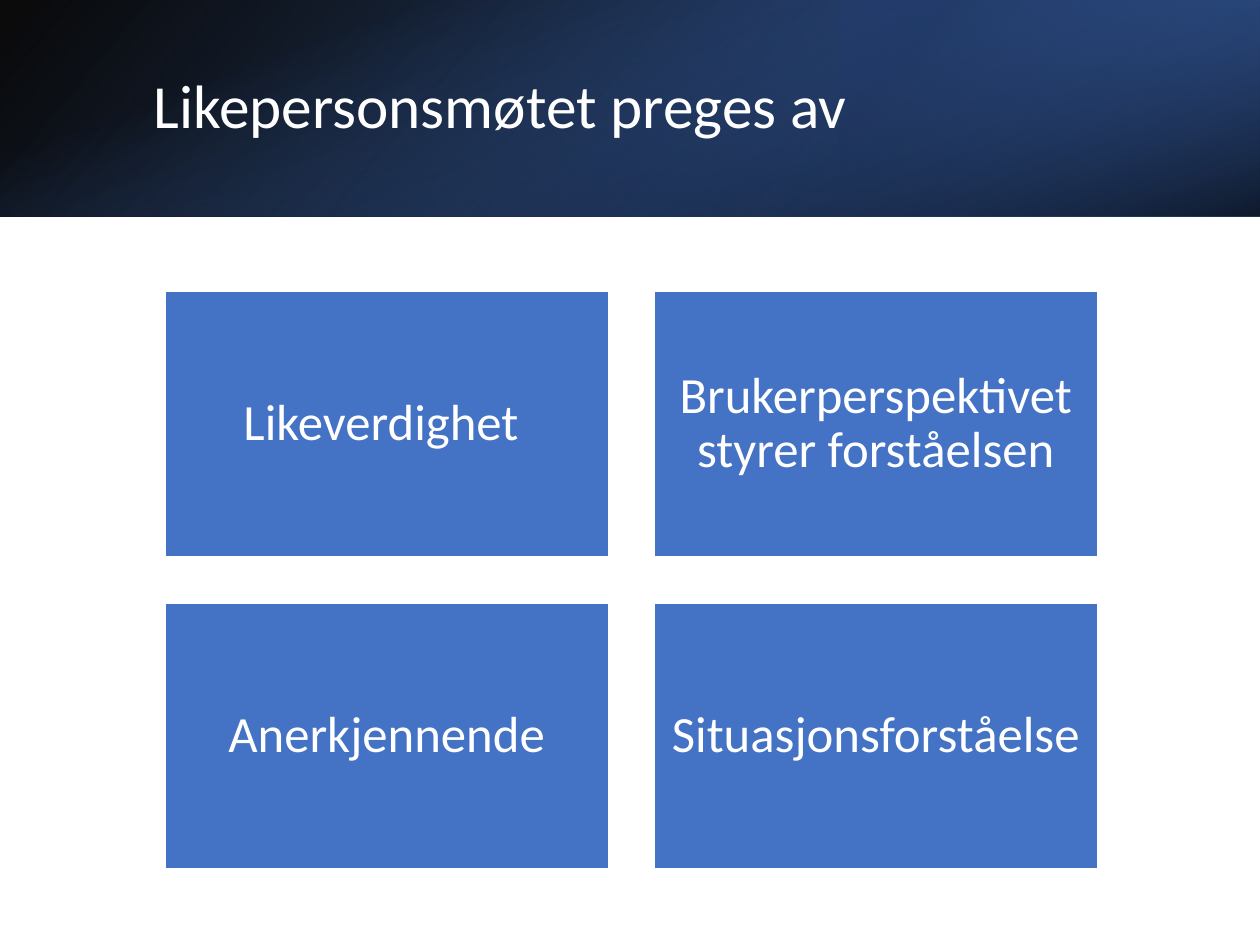
from lxml import etree
from pptx import Presentation
from pptx.dml.color import RGBColor
from pptx.enum.shapes import MSO_SHAPE
from pptx.enum.text import MSO_ANCHOR, PP_ALIGN
from pptx.oxml.ns import qn
from pptx.util import Pt

RECT = MSO_SHAPE.RECTANGLE
MIDDLE = MSO_ANCHOR.MIDDLE
LEFT, CENTER = PP_ALIGN.LEFT, PP_ALIGN.CENTER
WHITE = RGBColor(0xFF, 0xFF, 0xFF)
BLACK = RGBColor(0x00, 0x00, 0x00)
BLUE = RGBColor(0x44, 0x72, 0xC4)
MID_BLUE = RGBColor(0x2F, 0x55, 0x97)
NAVY = RGBColor(0x20, 0x38, 0x64)


def fill_gradient(sp, stops, angle):
    """Linear gradient; stops are (position %, colour, opacity % or None)."""
    sp.fill.gradient()
    grad = sp.fill._fill._gradFill
    for child in list(grad):
        grad.remove(child)
    gs_list = etree.SubElement(grad, qn("a:gsLst"))
    for pos, color, alpha in stops:
        gs = etree.SubElement(gs_list, qn("a:gs"), pos=str(pos * 1000))
        clr = etree.SubElement(gs, qn("a:srgbClr"), val=str(color))
        if alpha is not None:
            etree.SubElement(clr, qn("a:alpha"), val=str(alpha * 1000))
    etree.SubElement(grad, qn("a:lin"), ang=str(angle * 60000), scaled="0")


def write(sp, text, size, align, inset_x, inset_y):
    tf = sp.text_frame
    tf.word_wrap = True
    tf.vertical_anchor = MIDDLE
    tf.margin_left = tf.margin_right = Pt(inset_x)
    tf.margin_top = tf.margin_bottom = Pt(inset_y)
    p = tf.paragraphs[0]
    p.alignment = align
    p.line_spacing = 0.9
    r = p.add_run()
    r.text = text
    r.font.name = "Calibri"
    r.font.size = Pt(size)
    r.font.color.rgb = WHITE


prs = Presentation()
prs.slide_width, prs.slide_height = Pt(720), Pt(540)
s = prs.slides.add_slide(prs.slide_layouts[6])

# Header band: three layered gradients
BAND_H = 124
layers = [
    # left, top, width, height, rotation, mirrored, stops, angle
    (0, 0, 720, BAND_H, 0, True,
     [(0, BLACK, 96), (100, MID_BLUE, None)], 140),
    (480, 0, 240, BAND_H, 180, True,
     [(19, NAVY, 68), (100, BLUE, 79)], 320),
    ((720 - BAND_H) / 2, (BAND_H - 720) / 2, BAND_H, 720, 90, False,
     [(23, BLUE, 0), (99, BLACK, 74)], 340),
]
for left, top, width, height, rotation, mirrored, stops, angle in layers:
    sp = s.shapes.add_shape(RECT, Pt(left), Pt(top), Pt(width), Pt(height))
    sp.shadow.inherit = False
    sp.line.fill.background()
    sp.rotation = rotation
    if mirrored:
        sp._element.spPr.find(qn("a:xfrm")).set("flipH", "1")
    fill_gradient(sp, stops, angle)

# Title
sp = s.shapes.add_textbox(Pt(80.6), Pt(27.4), Pt(593.3), Pt(69))
write(sp, "Likepersonsmøtet preges av", 35, LEFT, 7.2, 3.6)

# Two by two grid of cards
CARD_W, CARD_H, GAP = 253.5, 152, 26
GRID_LEFT, GRID_TOP = 94.3, 166.4
cards = [
    "Likeverdighet ",
    "Brukerperspektivet styrer forståelsen",
    "Anerkjennende",
    "Situasjonsforståelse",
]
for i, text in enumerate(cards):
    row, col = divmod(i, 2)
    sp = s.shapes.add_shape(RECT,
                            Pt(GRID_LEFT + col * (CARD_W + GAP)),
                            Pt(GRID_TOP + row * (CARD_H + GAP)),
                            Pt(CARD_W), Pt(CARD_H))
    sp.shadow.inherit = False
    sp.fill.solid()
    sp.fill.fore_color.rgb = BLUE
    sp.line.color.rgb = WHITE
    sp.line.width = Pt(1)
    write(sp, text, 29, CENTER, 8.7, 8.7)

prs.save("out.pptx")
